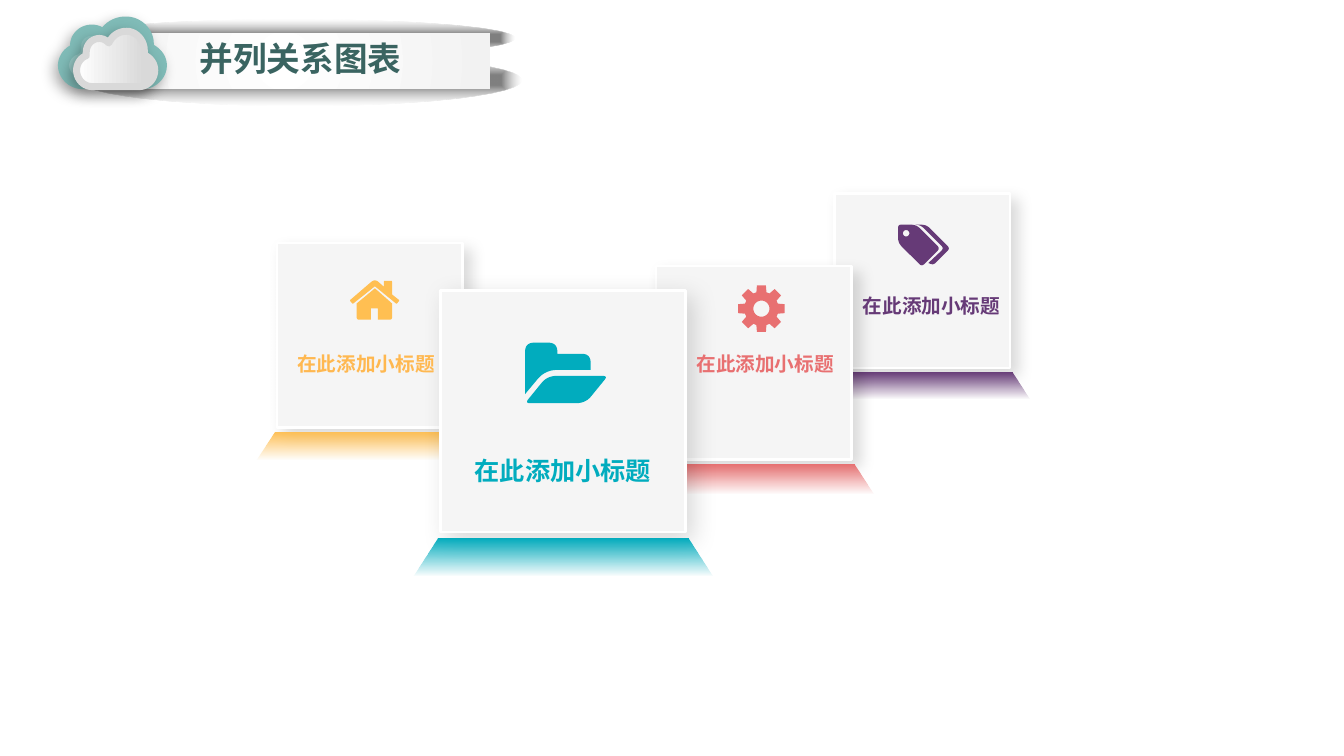
import math
from typing import NamedTuple

from lxml import etree
from pptx import Presentation
from pptx.dml.color import RGBColor
from pptx.enum import shapes, text
from pptx.oxml import ns
from pptx.util import Pt

FONT = "Noto Sans CJK SC"
GRID = 0.72  # points per unit of the icon and cloud outlines
FINE = 100  # freeform steps per point


class Corner(NamedTuple):
    x: float
    y: float
    radius: float = 0


class Stop(NamedTuple):
    position: int
    colour: str
    alpha: int = 100


class Shadow(NamedTuple):
    alpha: int
    blur: float
    distance: float
    angle: int


class Card(NamedTuple):
    left: float
    top: float
    width: float
    height: float
    colour: str
    blur: float
    label_at: tuple
    label_size: int
    label_colour: str
    icon: list
    icon_at: tuple


class Cloud(NamedTuple):
    left: float
    top: float
    scale_x: float
    scale_y: float
    stops: list
    line: str
    line_width: float


def rgb(colour: str) -> RGBColor:
    return RGBColor.from_string(colour)


def bezier(points: list, steps: int = 10) -> list:
    """Sample a Bezier curve of any degree, leaving out its first point."""
    degree = len(points) - 1
    curve = []
    for step in range(1, steps + 1):
        t = step / steps
        weights = [math.comb(degree, i) * t**i * (1 - t) ** (degree - i) for i in range(degree + 1)]
        curve.append(tuple(sum(w * p[axis] for w, p in zip(weights, points)) for axis in (0, 1)))
    return curve


def rounded(*corners: tuple) -> list:
    """Turn corners (x, y, radius) into a closed outline with soft corners."""
    corners = [Corner(*corner) for corner in corners]
    outline = []
    for i, corner in enumerate(corners):
        tip = (corner.x, corner.y)
        if not corner.radius:
            outline.append(tip)
            continue
        ends = []
        for other in (corners[i - 1], corners[(i + 1) % len(corners)]):
            share = corner.radius / math.dist(tip, other[:2])
            ends.append((corner.x + (other.x - corner.x) * share, corner.y + (other.y - corner.y) * share))
        outline += [ends[0]] + bezier([ends[0], tip, ends[1]])
    return outline


def polar(centre: tuple, radius: float, degrees: float) -> tuple:
    angle = math.radians(degrees)
    return centre[0] + radius * math.cos(angle), centre[1] + radius * math.sin(angle)


def circle(centre: tuple, radius: float) -> list:
    return [polar(centre, radius, -10 * i) for i in range(36)]


def gear(centre: tuple) -> list:
    tooth = ((-17, 17), (-11, 23.5), (11, 23.5), (17, 17))
    return [polar(centre, radius, 45 * i + turn) for i in range(8) for turn, radius in tooth]


def cloud_outline() -> list:
    outline = [(84, 26)]
    for curve in (
        ((84, 25), (84, 23), (84, 21)), ((84, 10), (74, 0), (62, 0)), ((52, 0), (44, 5), (40, 13)),
        ((37, 10), (33, 8), (28, 8)), ((19, 8), (12, 15), (12, 23)), ((12, 24), (12, 26), (12, 27)),
        ((5, 29), (0, 36), (0, 43)), ((0, 53), (9, 61), (19, 61)), ((39, 61), (58, 61), (78, 61)),
        ((88, 61), (97, 53), (97, 43)), ((97, 35), (91, 29), (84, 26)),
    ):
        outline += bezier([outline[-1], *curve])
    return outline


HOUSE = [
    rounded((25, -1.5, 5), (34, 6.5), (34, 0.5, 1), (42, 0.5, 1), (42, 14), (49.5, 20, 1),
            (46.5, 23.5, 1), (25, 6), (3, 23.5, 1), (0, 20, 1)),
    rounded((25, 8), (42, 23), (42, 39, 2), (28, 39), (28, 28), (21, 28), (21, 39), (7, 39, 2), (7, 23)),
]
FOLDER = [
    rounded((22, 33, 9), (82, 33, 5), (60, 60, 9), (0, 60, 5)),
    rounded((0, 0, 9), (32, 0, 9), (32, 11), (65, 11, 9), (65, 27), (20, 27, 12), (0, 51)),
]
GEAR = [gear((23.5, 23.5)), circle((23.5, 23.5), 8)]
TAGS = [
    circle((8, 8.5), 3.2),
    rounded((18, 0), (28, 0, 5), (51.5, 23.5, 3.5), (35, 40, 3), (30, 38), (45.5, 23.5, 3.5), (22, 0, 5)),
    rounded((0, 0, 3), (18, 0, 5), (41.5, 23.5, 3.5), (23.5, 41.5, 3.5), (0, 18, 5)),
]
LABEL = "在此添加小标题"
CARDS = [
    Card(596.2, 138.2, 125.3, 124.6, "663A77", 11, (616.3, 210.2), 14, "663A77", TAGS, (641.5, 160.5)),
    Card(468.7, 190, 139.7, 138.2, "E87071", 11, (497.5, 251.3), 14, "E87071", GEAR, (527, 203.6)),
    Card(198, 173.5, 132.5, 131.8, "FFBF52", 11, (212.4, 251.3), 14, "FFB850", HOUSE, (249.8, 200.2)),
    Card(314.6, 207.4, 175, 172.8, "01ACBE", 18, (339.1, 325.4), 18, "01ACBE", FOLDER, (375.1, 244.8)),
]
CLOUDS = [
    Cloud(45.4, 15.8, 1, 1, [Stop(0, "9CCCC9"), Stop(87, "68B0AB")], "80BBB7", 8),
    Cloud(54.7, 22.3, 0.8, 0.9, [Stop(0, "FFFFFF"), Stop(87, "D9D9D9")], "D9D9D9", 5),
]


def add_colour(parent, colour: str, alpha: int) -> None:
    node = etree.SubElement(parent, ns.qn("a:srgbClr"), val=colour)
    etree.SubElement(node, ns.qn("a:alpha"), val=str(alpha * 1000))


def fill_gradient(shape, stops: list, angle: int = 0, centred: str = "") -> None:
    """Fill along an angle, or outwards from the middle when centred names a form."""
    shape.fill.background()
    gradient = etree.Element(ns.qn("a:gradFill"), rotWithShape="1")
    stop_list = etree.SubElement(gradient, ns.qn("a:gsLst"))
    for stop in stops:
        node = etree.SubElement(stop_list, ns.qn("a:gs"), pos=str(stop.position * 1000))
        add_colour(node, stop.colour, stop.alpha)
    if centred:
        form = etree.SubElement(gradient, ns.qn("a:path"), {"path": centred})
        etree.SubElement(form, ns.qn("a:fillToRect"), dict.fromkeys("ltrb", "50000"))
    else:
        etree.SubElement(gradient, ns.qn("a:lin"), ang=str(angle * 60000), scaled="0")
    properties = shape.element.spPr
    properties.replace(properties.find(ns.qn("a:noFill")), gradient)


def finish(shape, fill: str = "", line: str = "", line_width: float = 1, shadow: Shadow | None = None) -> None:
    shape.shadow.inherit = False
    if fill:
        shape.fill.solid()
        shape.fill.fore_color.rgb = rgb(fill)
    if line:
        shape.line.color.rgb = rgb(line)
        shape.line.width = Pt(line_width)
    else:
        shape.line.fill.background()
    if shadow:
        effects = shape.element.spPr.find(ns.qn("a:effectLst"))
        node = etree.SubElement(
            effects, ns.qn("a:outerShdw"), blurRad=str(Pt(shadow.blur)), dist=str(Pt(shadow.distance)),
            dir=str(shadow.angle * 60000), algn="ctr", rotWithShape="0")
        add_colour(node, "000000", shadow.alpha)


def add_outline(page, contours: list, left: float, top: float, scale_x: float = 1, scale_y: float = 1):
    scaled = [[(x * scale_x * FINE, y * scale_y * FINE) for x, y in contour] for contour in contours]
    builder = page.shapes.build_freeform(*scaled[0][0], scale=Pt(1 / FINE))
    builder.add_line_segments(scaled[0][1:], close=True)
    for contour in scaled[1:]:
        builder.move_to(*contour[0])
        builder.add_line_segments(contour[1:], close=True)
    return builder.convert_to_shape(Pt(left), Pt(top))


def add_preset(page, kind, left: float, top: float, width: float, height: float):
    return page.shapes.add_shape(kind, Pt(left), Pt(top), Pt(width), Pt(height))


def write(box, words: str, size: float, colour: str, margin_x: float = 0, margin_y: float = 0) -> None:
    frame = box.text_frame
    frame.word_wrap = True
    frame.auto_size = text.MSO_AUTO_SIZE.NONE
    frame.vertical_anchor = text.MSO_ANCHOR.MIDDLE
    frame.margin_left = frame.margin_right = Pt(margin_x)
    frame.margin_top = frame.margin_bottom = Pt(margin_y)
    para = frame.paragraphs[0]
    para.alignment = text.PP_ALIGN.LEFT
    span = para.add_run()
    span.text = words
    font = span.font
    font.name, font.size, font.bold = FONT, Pt(size), True
    font.color.rgb = rgb(colour)
    etree.SubElement(span.font._element, ns.qn("a:ea"), typeface=FONT)


def add_card(page, card: Card) -> None:
    square = add_preset(page, shapes.MSO_SHAPE.RECTANGLE, *card[:4])
    finish(square, "F5F5F5", "FFFFFF", 1.75, Shadow(14, card.blur, 7, 45))
    width, depth = card.width, card.width * 0.15
    floor = [(-0.11 * width, depth), (-0.01 * width, 0), (1.01 * width, 0), (1.11 * width, depth)]
    glow = add_outline(page, [floor], card.left, card.top + card.height + 0.025 * width)
    finish(glow)
    fill_gradient(glow, [Stop(0, card.colour), Stop(100, card.colour, 0)], angle=90)


def add_label_and_icon(page, card: Card) -> None:
    left, top = card.label_at
    size = card.label_size
    write(page.shapes.add_textbox(Pt(left), Pt(top), Pt(size * 7.5), Pt(size * 1.2)),
          LABEL, size, card.label_colour)
    finish(add_outline(page, card.icon, *card.icon_at, GRID, GRID), card.colour)


def add_banner(page) -> None:
    for place in ((56.2, 38.9, 316.1, 36.7), (50.4, 14.4, 316.8, 25.9)):
        shade = add_preset(page, shapes.MSO_SHAPE.OVAL, *place)
        finish(shade)
        fill_gradient(shade, [Stop(20, "808080"), Stop(100, "C9C9C9", 0)], centred="shape")
    strip = add_preset(page, shapes.MSO_SHAPE.RECTANGLE, 56.2, 23.8, 293.8, 39.6)
    finish(strip)
    fill_gradient(strip, [Stop(0, "FFFFFF"), Stop(100, "F2F2F2")], centred="circle")
    for cloud in CLOUDS:
        shape = add_outline(page, [cloud_outline()], cloud.left, cloud.top,
                            GRID * cloud.scale_x, GRID * cloud.scale_y)
        finish(shape, line=cloud.line, line_width=cloud.line_width, shadow=Shadow(30, 10, 5, 135))
        fill_gradient(shape, cloud.stops)


def add_title(page) -> None:
    title = page.shapes.title
    title.left, title.top, title.width, title.height = Pt(135.4), Pt(23.8), Pt(208), Pt(36)
    write(title, "并列关系图表", 24, "3A6461", 7.2, 3.6)
    title.element.getparent().append(title.element)  # in front of the banner


def main() -> None:
    deck = Presentation()
    deck.slide_width, deck.slide_height = Pt(960), Pt(540)
    page = deck.slides.add_slide(deck.slide_layouts[5])
    for card in CARDS:
        add_card(page, card)
    for card in CARDS:
        add_label_and_icon(page, card)
    add_banner(page)
    add_title(page)
    deck.save("out.pptx")


if __name__ == "__main__":
    main()
